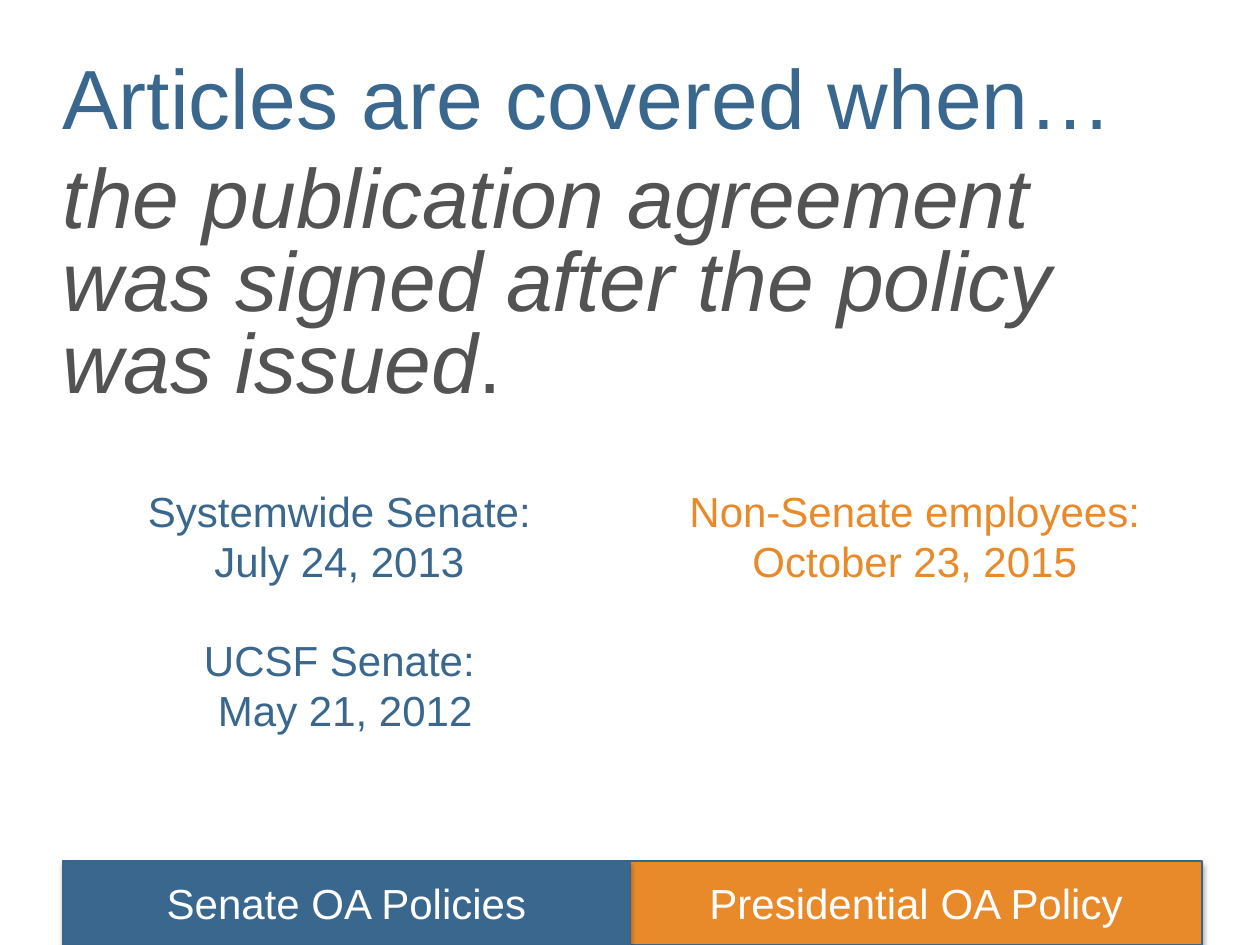
from dataclasses import dataclass

from lxml import etree
from pptx import Presentation
from pptx.dml.color import RGBColor
from pptx.enum.shapes import MSO_SHAPE
from pptx.enum.text import MSO_ANCHOR, PP_ALIGN
from pptx.oxml.ns import qn
from pptx.util import Inches, Pt

RECTANGLE = MSO_SHAPE.RECTANGLE
MIDDLE = MSO_ANCHOR.MIDDLE
CENTER = PP_ALIGN.CENTER
LEFT = PP_ALIGN.LEFT
COLUMNS, ROWS = 20, 45


@dataclass(frozen=True)
class Theme:
    font: str = "Arial"
    senate: str = "3A678D"
    presidential: str = "E98A2A"
    statement: str = "535353"
    outline: str = "37658C"
    light: str = "FFFFFF"
    shadow: str = "000000"
    heading_size: int = 48
    body_size: int = 24


class PolicySlide:
    def __init__(self, deck, theme):
        self.theme = theme
        self.column = deck.slide_width / COLUMNS
        self.row = deck.slide_height / ROWS
        self.slide = deck.slides.add_slide(deck.slide_layouts[6])

    def area(self, left, top, width, height):
        return (round(left * self.column), round(top * self.row),
                round(width * self.column), round(height * self.row))

    def run(self, paragraph, text, color, size, italic=False):
        run = paragraph.add_run()
        run.text = text
        run.font.name = self.theme.font
        run.font.size = Pt(size)
        run.font.italic = italic
        run.font.color.rgb = RGBColor.from_string(color)

    def text_frame(self, cells):
        frame = self.slide.shapes.add_textbox(*self.area(*cells)).text_frame
        frame.word_wrap = True
        return frame

    def statement(self, cells, paragraphs):
        frame = self.text_frame(cells)
        frame.margin_left = frame.margin_right = 0
        frame.margin_top = frame.margin_bottom = 0
        for index, runs in enumerate(paragraphs):
            paragraph = frame.add_paragraph() if index else frame.paragraphs[0]
            paragraph.alignment = LEFT
            paragraph.line_spacing = 0.82
            paragraph.space_before = Pt(self.theme.heading_size * 0.2)
            for text, color, italic in runs:
                self.run(paragraph, text, color, self.theme.heading_size, italic)

    def dates(self, cells, color, entries):
        frame = self.text_frame(cells)
        size = self.theme.body_size
        for index, (group, date) in enumerate(entries):
            paragraph = frame.add_paragraph() if index else frame.paragraphs[0]
            paragraph.alignment = CENTER
            if index:
                paragraph.space_before = Pt(size * 1.15)
            self.run(paragraph, group, color, size)
            paragraph.add_line_break()
            self.run(paragraph, date, color, size)

    def banner(self, cells, label, fill):
        bar = self.slide.shapes.add_shape(RECTANGLE, *self.area(*cells))
        bar.fill.solid()
        bar.fill.fore_color.rgb = RGBColor.from_string(fill)
        bar.line.color.rgb = RGBColor.from_string(self.theme.outline)
        bar.line.width = Pt(0.75)
        self.drop_shadow(bar)
        bar.text_frame.vertical_anchor = MIDDLE
        paragraph = bar.text_frame.paragraphs[0]
        paragraph.alignment = CENTER
        self.run(paragraph, label, self.theme.light, self.theme.body_size)

    def drop_shadow(self, shape):
        shape.shadow.inherit = False
        effects = shape.element.spPr.find(qn("a:effectLst"))
        shadow = etree.SubElement(
            effects, qn("a:outerShdw"), blurRad=str(Pt(3.1)),
            dist=str(Pt(1.8)), dir="5400000", rotWithShape="0")
        color = etree.SubElement(shadow, qn("a:srgbClr"), val=self.theme.shadow)
        etree.SubElement(color, qn("a:alpha"), val="35000")


def main():
    deck = Presentation()
    deck.slide_width, deck.slide_height = Inches(10), Inches(7.5)
    theme = Theme()
    page = PolicySlide(deck, theme)

    page.banner((10, 41, 9.08, 4), "Presidential OA Policy", theme.presidential)
    page.statement((1, 3, 18.08, 16.86), [
        [("Articles are covered when…", theme.senate, False)],
        [("the publication agreement was signed after the policy was issued",
          theme.statement, True),
         (".", theme.statement, False)],
    ])
    page.dates((0.98, 22.8, 9, 12.72), theme.senate, [
        ("Systemwide Senate: ", "July 24, 2013 "),
        ("UCSF Senate: ", "May 21, 2012"),
    ])
    page.dates((10.02, 22.8, 9, 5.46), theme.presidential, [
        ("Non-Senate employees:", "October 23, 2015"),
    ])
    page.banner((1, 41, 9, 4), "Senate OA Policies", theme.senate)

    deck.save("out.pptx")


if __name__ == "__main__":
    main()
